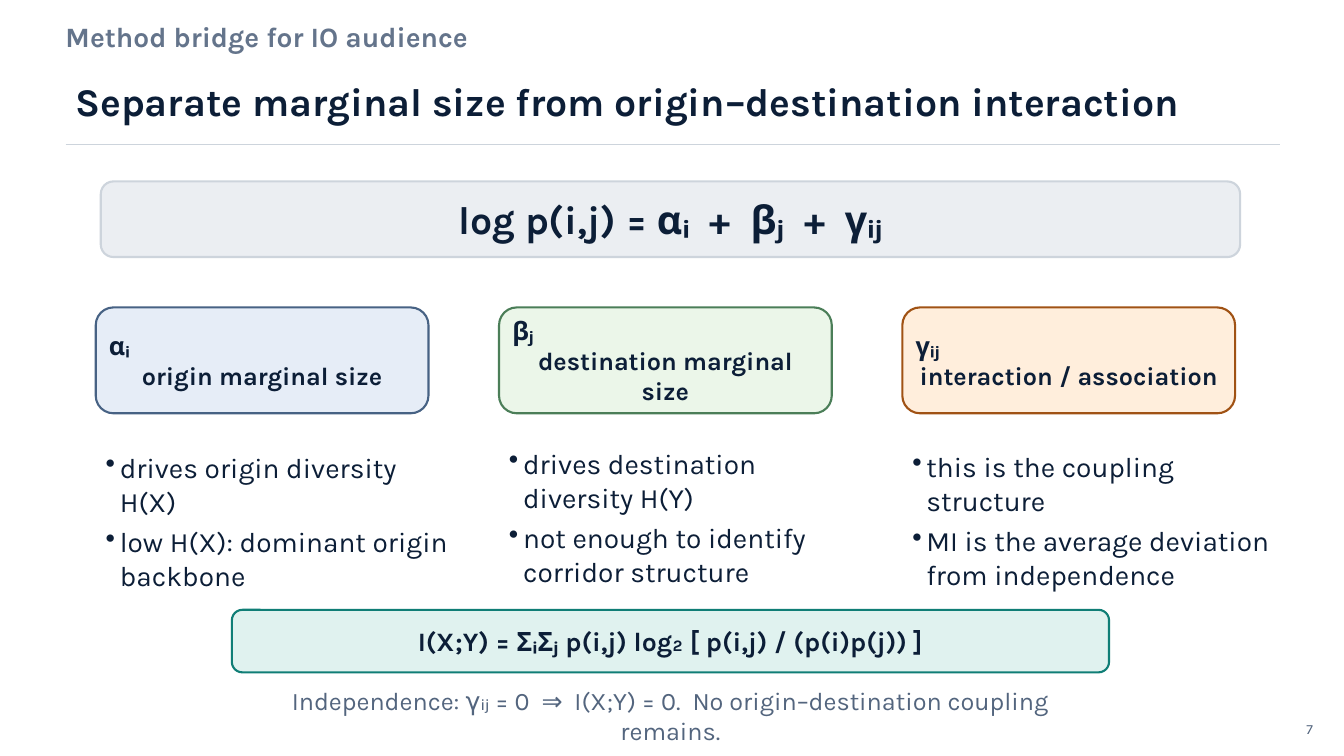
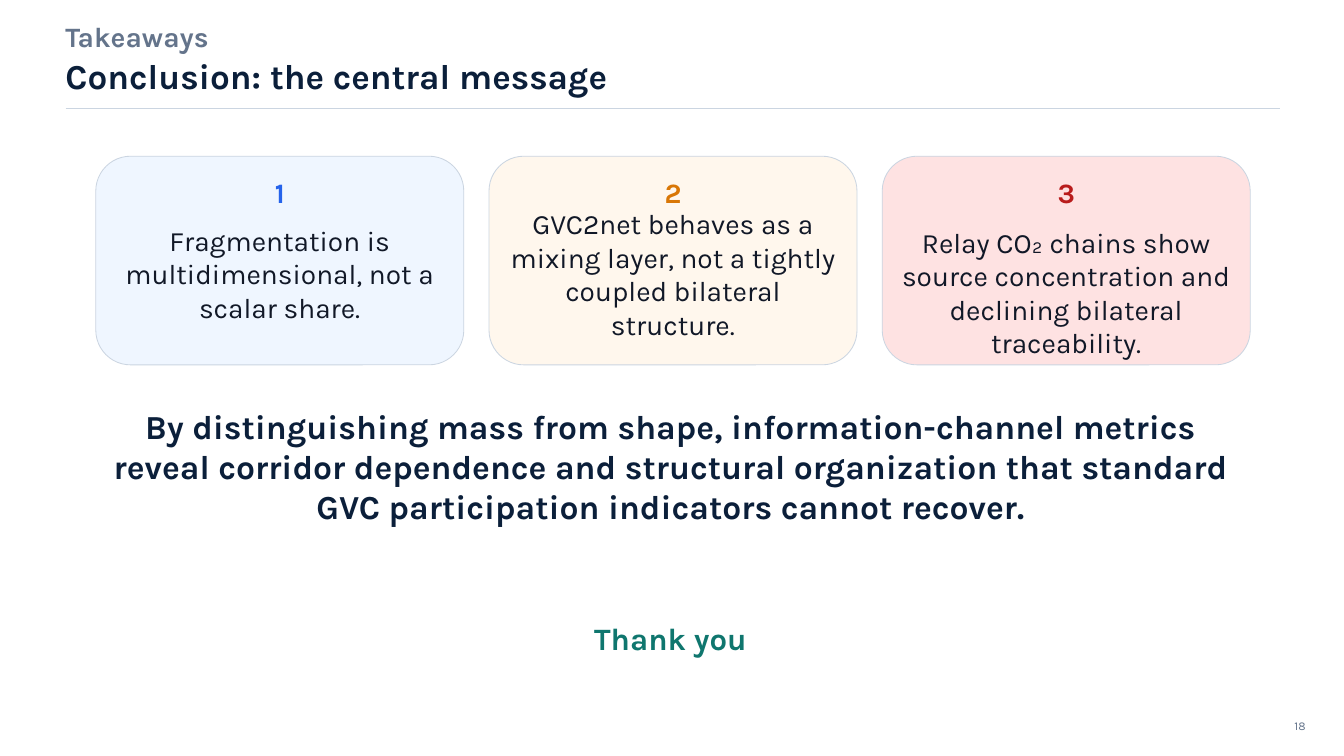
from lxml import etree
from pptx import Presentation
from pptx import util as u
from pptx.dml.color import RGBColor
from pptx.enum import shapes, text
from pptx.oxml.ns import qn

PX = 9144  # EMU: 100 px to the inch
FONT = "Karla"
NAVY, DEEP_NAVY, INK = "0C1E37", "0B1F3A", "111827"
SLATE, MUTED, RULE, FRAME = "64748B", "53657E", "CBD5E1", "CDD4DC"
LEFT, CENTER, RIGHT = (text.PP_ALIGN.LEFT, text.PP_ALIGN.CENTER,
                       text.PP_ALIGN.RIGHT)
TOP, MIDDLE = text.MSO_ANCHOR.TOP, text.MSO_ANCHOR.MIDDLE
NO_INSETS, TEXT_INSETS, BOX_INSETS = (0, 0), (10, 5), (8, 4)


def px(*lengths):
    return [u.Emu(length * PX) for length in lengths]


def color(value):
    return RGBColor.from_string(value)


class Deck:
    def __init__(self):
        self.deck = Presentation()
        self.deck.slide_width, self.deck.slide_height = px(1333, 750)
        self.page = None

    def new_page(self, section):
        self.page = self.deck.slides.add_slide(self.deck.slide_layouts[6])
        self.label((65, 25, 420, 22), section, 20, SLATE, bold=True)

    def fill_text(self, shape, lines, size, ink, bold, aligns, anchor, insets,
                  bullets=False):
        """Fill a shape with one paragraph per line, each with its alignment."""
        frame = shape.text_frame
        frame.word_wrap = True
        frame.vertical_anchor = anchor
        across, down = px(*insets)
        frame.margin_left = frame.margin_right = across
        frame.margin_top = frame.margin_bottom = down
        for index, (line, align) in enumerate(zip(lines, aligns)):
            para = frame.add_paragraph() if index else frame.paragraphs[0]
            para.alignment = align
            if bullets:
                para.space_after = u.Pt(5)
                self.add_bullet(para)
            span = para.add_run()
            span.text = line
            font = span.font
            font.name, font.size, font.bold = FONT, u.Pt(size), bold
            font.color.rgb = color(ink)

    def add_bullet(self, para):
        properties = para._p.get_or_add_pPr()
        indent = 14 * PX
        properties.set("marL", str(indent))
        properties.set("indent", str(-indent))
        etree.SubElement(properties, qn("a:buChar")).set("char", "•")

    def label(self, area, line, size, ink, bold=False, align=LEFT,
              anchor=MIDDLE, insets=NO_INSETS):
        box = self.page.shapes.add_textbox(*px(*area))
        self.fill_text(box, [line], size, ink, bold, [align], anchor, insets)

    def bullet_list(self, area, lines):
        box = self.page.shapes.add_textbox(*px(*area))
        self.fill_text(box, lines, 20, NAVY, False, [LEFT] * len(lines), TOP,
                       TEXT_INSETS, bullets=True)

    def card(self, area, fill, line, weight):
        card = self.page.shapes.add_shape(
            shapes.MSO_SHAPE.ROUNDED_RECTANGLE, *px(*area))
        card.shadow.inherit = False
        card.fill.solid()
        card.fill.fore_color.rgb = color(fill)
        card.line.color.rgb = color(line)
        card.line.width = u.Pt(weight)
        return card

    def text_card(self, area, fill, line, lines, size, aligns=(CENTER,)):
        card = self.card(area, fill, line, 1.5)
        self.fill_text(card, lines, size, NAVY, True, aligns, MIDDLE,
                       BOX_INSETS)

    def rule(self, top, ink):
        rule = self.page.shapes.add_connector(
            shapes.MSO_CONNECTOR.STRAIGHT, *px(65, top, 1270, top))
        rule.line.color.rgb = color(ink)
        rule.line.width = u.Pt(0.7)
        etree.SubElement(rule._element.spPr, qn("a:effectLst"))


def build_method(deck):
    deck.new_page("Method bridge for IO audience")
    deck.label((65, 72, 1200, 65),
               "Separate marginal size from origin–destination interaction",
               28, NAVY, bold=True, anchor=TOP, insets=TEXT_INSETS)
    deck.rule(143, FRAME)
    deck.text_card((100, 180, 1130, 75), "EBEEF2", FRAME,
                   ["log p(i,j) = αᵢ  +  βⱼ  +  γᵢⱼ"], 28)

    # symbol, meaning, fill, line, list top, list width, points
    terms = [
        ("αᵢ", "origin marginal size", "E6EDF7", "476284", 442, 367,
         ["drives origin diversity H(X)",
          "low H(X): dominant origin backbone"]),
        ("βⱼ", "destination marginal size", "EBF6E9", "4B7E58", 438, 367,
         ["drives destination diversity H(Y)",
          "not enough to identify corridor structure"]),
        ("γᵢⱼ", "interaction / association", "FFEEDC", "A05214", 441, 397,
         ["this is the coupling structure",
          "MI is the average deviation from independence"]),
    ]
    for column, term in enumerate(terms):
        symbol, meaning, fill, line, top, width, points = term
        left = 95 + 400 * column
        deck.text_card((left, 305, 330, 105), fill, line, [symbol, meaning],
                       18, (LEFT, CENTER))
        deck.bullet_list((left, top, width, 152), points)

    deck.text_card((230, 605, 870, 62), "E0F2EF", "107E76",
                   ["I(X;Y) = ΣᵢΣⱼ p(i,j) log₂ [ p(i,j) / (p(i)p(j)) ]"], 19)
    deck.label((240, 675, 850, 35),
               "Independence: γᵢⱼ = 0  ⇒  I(X;Y) = 0.  "
               "No origin–destination coupling remains.",
               18, MUTED, align=CENTER, anchor=TOP, insets=TEXT_INSETS)
    deck.label((1277, 710, 35, 22), "7", 10, MUTED, align=RIGHT, anchor=TOP,
               insets=TEXT_INSETS)


def build_conclusion(deck):
    deck.new_page("Takeaways")
    deck.label((65, 52, 1190, 45), "Conclusion: the central message",
               25, DEEP_NAVY, bold=True)
    deck.rule(108, RULE)

    # message, fill, number colour, message height
    messages = [
        ("Fragmentation is multidimensional, not a scalar share.",
         "EFF6FF", "2563EB", 107),
        ("GVC2net behaves as a mixing layer, not a tightly coupled "
         "bilateral structure.", "FFF7ED", "D97706", 107),
        ("Relay CO₂ chains show source concentration and declining "
         "bilateral traceability.", "FEE2E2", "B91C1C", 144),
    ]
    for index, (message, fill, accent, height) in enumerate(messages):
        left = 95 + 390 * index
        deck.card((left, 155, 365, 207), fill, RULE, 0.6)
        deck.label((left + 12, 173, 341, 36), str(index + 1), 20, accent,
                   bold=True, align=CENTER)
        deck.label((left + 14, 218, 337, height), message, 20, INK,
                   align=CENTER)

    deck.label((100, 415, 1130, 95),
               "By distinguishing mass from shape, information-channel metrics "
               "reveal corridor dependence and structural organization that "
               "standard GVC participation indicators cannot recover.",
               24, DEEP_NAVY, bold=True, align=CENTER)
    deck.label((100, 615, 1130, 35), "Thank you", 22.2, "0F766E", bold=True,
               align=CENTER)
    deck.label((1265, 710, 30, 20), "18", 8.5, SLATE, align=RIGHT)


def main():
    deck = Deck()
    build_method(deck)
    build_conclusion(deck)
    deck.deck.save("out.pptx")


if __name__ == "__main__":
    main()
